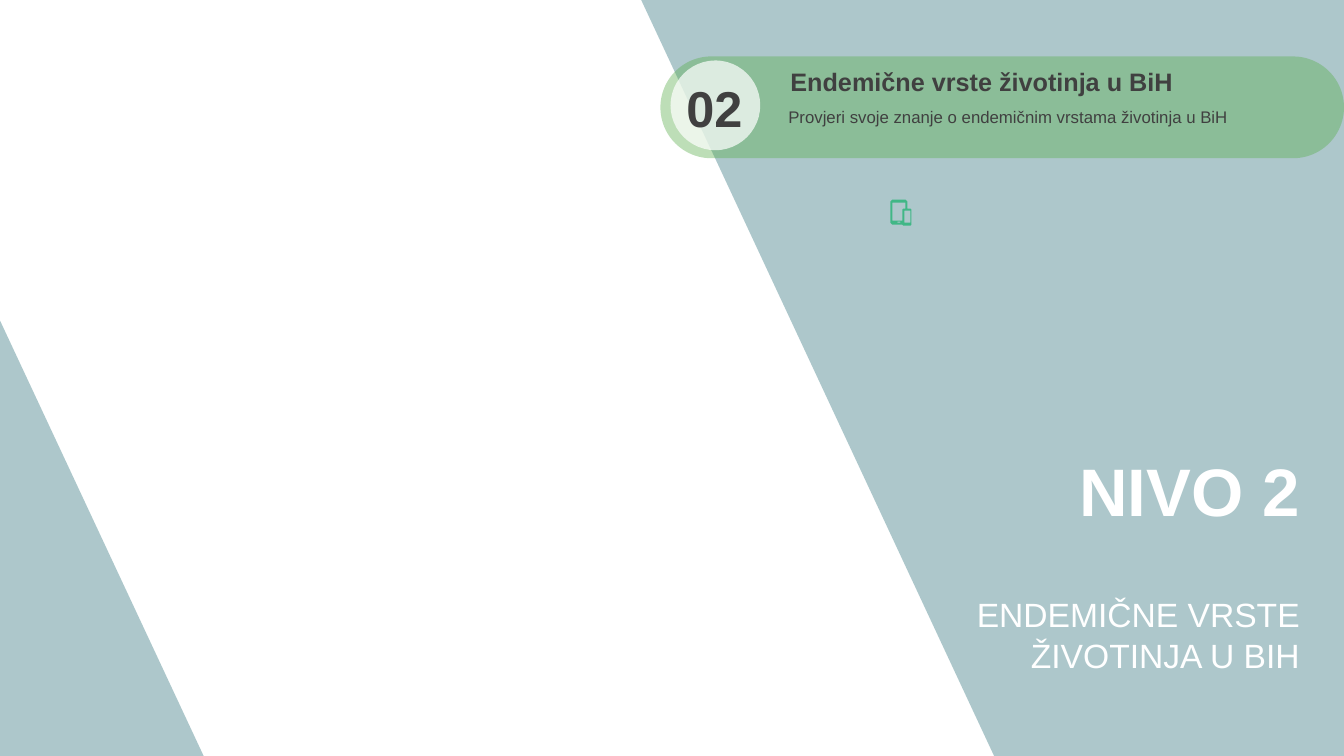
from pptx import Presentation
from pptx.dml.color import RGBColor
from pptx.enum.shapes import MSO_SHAPE as Kind
from pptx.enum.text import MSO_ANCHOR as Anchor, PP_ALIGN as Align
from pptx.oxml.ns import qn
from pptx.util import Inches, Pt
from lxml import etree

TEAL = RGBColor(0x32, 0x75, 0x7F)
GREEN = RGBColor(0x5A, 0xAE, 0x4C)
MINT = RGBColor(0x40, 0xB7, 0x86)
WHITE = RGBColor(0xFF, 0xFF, 0xFF)
DARK = RGBColor(0x40, 0x40, 0x40)


def cut(left, top, right, low, bevel=0.01):
    return [(left + bevel, top), (right - bevel, top),
            (right, top + bevel), (right, low - bevel),
            (right - bevel, low), (left + bevel, low),
            (left, low - bevel), (left, top + bevel)]


class Deck:
    font = "Arial"

    def __init__(self, wide, high):
        self.prs = Presentation()
        self.prs.slide_width = Inches(wide)
        self.prs.slide_height = Inches(high)
        self.slide = self.prs.slides.add_slide(self.prs.slide_layouts[6])

    def paint(self, shape, color, alpha):
        shape.shadow.inherit = False
        shape.line.fill.background()
        shape.fill.solid()
        shape.fill.fore_color.rgb = color
        if alpha < 100:
            tone = shape.fill._xPr.find(qn("a:solidFill"))[0]
            etree.SubElement(tone, qn("a:alpha")).set("val", str(alpha * 1000))
        return shape

    def shape(self, kind, box, color, alpha=100):
        item = self.slide.shapes.add_shape(kind, *map(Inches, box))
        return self.paint(item, color, alpha)

    def free(self, loops, color, alpha=100):
        loops = [[(Inches(x), Inches(y)) for x, y in loop] for loop in loops]
        pen = self.slide.shapes.build_freeform(*loops[0][0])
        for i, loop in enumerate(loops):
            if i:
                pen.move_to(*loop[0])
            pen.add_line_segments(loop[1:], close=True)
        return self.paint(pen.convert_to_shape(), color, alpha)

    def text(self, words, box, size, color, bold=False,
             align=Align.LEFT, anchor=Anchor.TOP, side=0.1):
        frame = self.slide.shapes.add_textbox(*map(Inches, box)).text_frame
        frame.word_wrap = True
        frame.vertical_anchor = anchor
        frame.margin_left = frame.margin_right = Inches(side)
        frame.text = words
        para = frame.paragraphs[0]
        para.alignment = align
        font = para.runs[0].font
        font.name, font.size, font.bold = self.font, Pt(size), bold
        font.color.rgb = color


def main():
    deck = Deck(13.33, 7.5)
    deck.free([[(6.36, 0), (13.33, 0), (13.33, 7.5), (9.86, 7.5)]], TEAL, 40)
    deck.shape(Kind.RIGHT_TRIANGLE, (0, 3.18, 2.02, 4.32), TEAL, 40)

    titles = [("NIVO 2", 4.4, 48, True),
              ("ENDEMIČNE VRSTE ŽIVOTINJA U BIH", 5.84, 24, False)]
    for words, top, size, bold in titles:
        deck.text(words, (9.09, top, 3.9, 0.91), size, WHITE, bold,
                  Align.RIGHT, Anchor.MIDDLE)

    tablet = [(8.85, 1.98), (8.98, 1.98), (9, 2), (9, 2.07), (8.98, 2.07),
              (8.98, 2.01), (8.85, 2.01), (8.85, 2.19), (8.95, 2.19),
              (8.95, 2.23), (8.85, 2.23), (8.83, 2.21), (8.83, 2)]
    phone = cut(8.95, 2.07, 9.04, 2.24)
    screen = cut(8.97, 2.09, 9.03, 2.21, 0)
    button = cut(8.9, 2.2, 8.93, 2.21, 0)
    deck.free([tablet, phone, screen, button], MINT)

    pill = deck.shape(Kind.ROUNDED_RECTANGLE, (6.55, 0.56, 6.78, 1.01),
                      GREEN, 40)
    pill.adjustments[0] = 0.5
    deck.shape(Kind.OVAL, (6.65, 0.6, 0.89, 0.89), WHITE, 70)
    deck.text("Provjeri svoje znanje o endemičnim vrstama životinja u BiH",
              (7.72, 1.01, 5.1, 0.3), 12, DARK)
    deck.text("Endemične vrste životinja u BiH",
              (7.72, 0.61, 5.1, 0.4), 18, DARK, True, side=0.12)
    deck.text("02", (6.55, 0.71, 1.07, 0.71), 36, DARK, True,
              Align.CENTER, Anchor.MIDDLE, 0.12)
    deck.prs.save("out.pptx")


if __name__ == "__main__":
    main()
